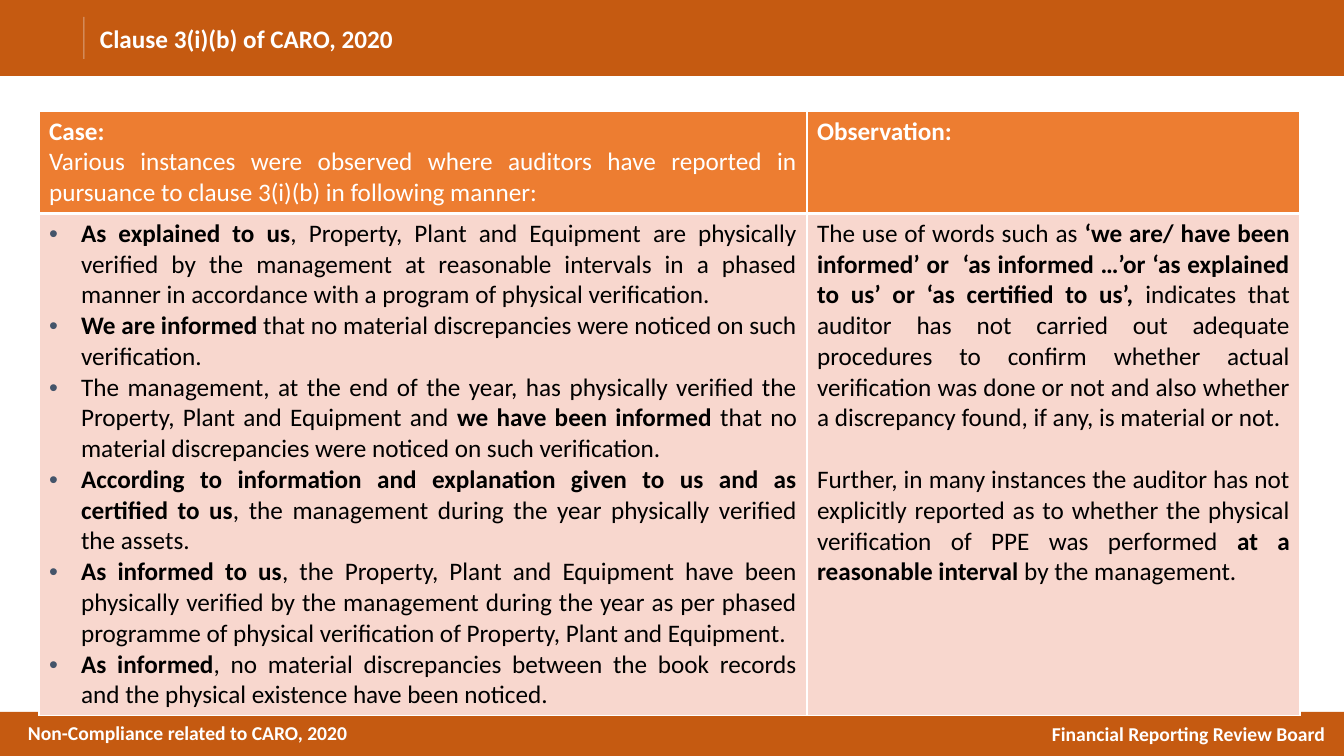
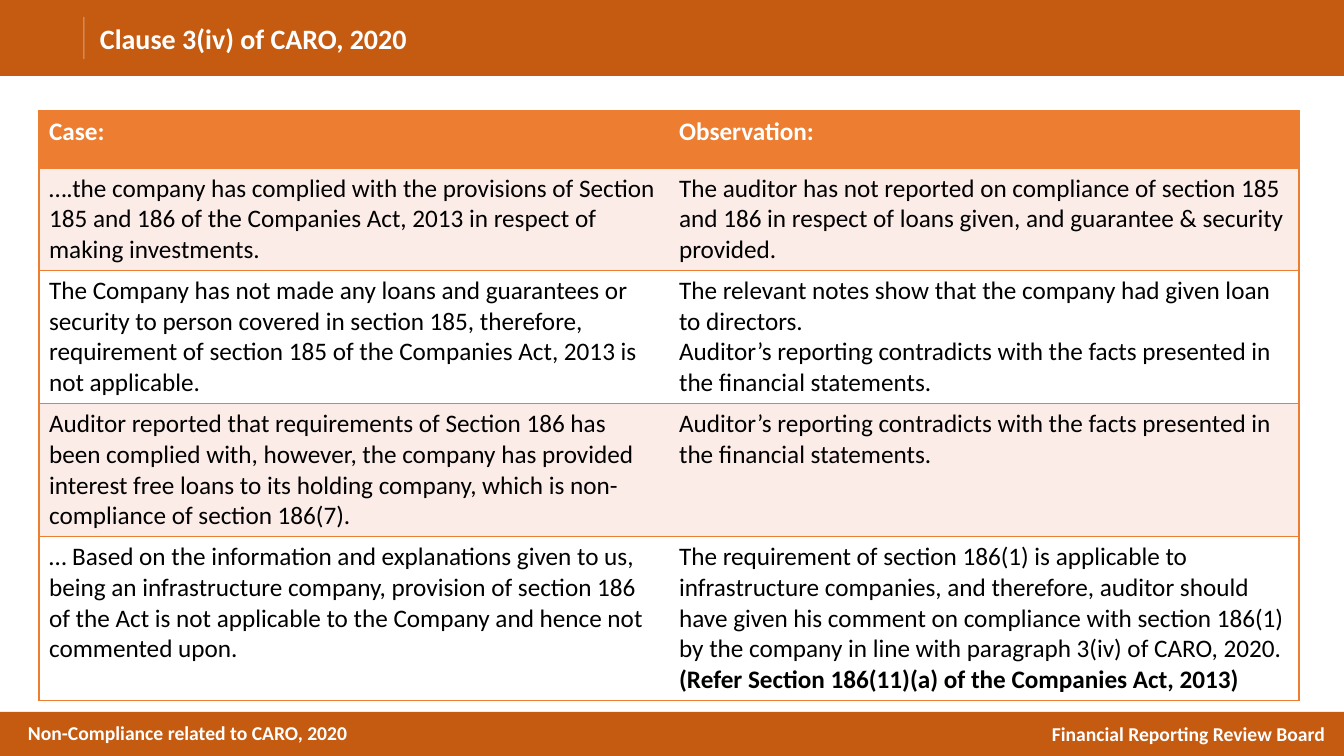
from lxml.etree import SubElement
from pptx import Presentation
from pptx.dml.color import RGBColor
from pptx.enum.shapes import MSO_CONNECTOR, MSO_SHAPE
from pptx.enum.text import MSO_ANCHOR, MSO_AUTO_SIZE, PP_ALIGN
from pptx.oxml.ns import qn
from pptx.util import Pt

PX = 12192000 / 1344
FONT = "Calibri"
COLORS = {
    "band": "C55A11", "rule": "F2F2F2", "white": "FFFFFF", "black": "000000",
    "header": "ED7D31", "rose": "F8D7CE", "blush": "FCECE8", "bullet": "44546A",
}


def write(para, text, size, color, align=PP_ALIGN.LEFT):
    """Fill a paragraph; text between ** marks is bold."""
    para.alignment = align
    for index, part in enumerate(text.split("**")):
        if part:
            span = para.add_run()
            span.text = part
            span.font.name = FONT
            span.font.size = Pt(size)
            span.font.bold = index % 2 == 1
            span.font.color.rgb = RGBColor.from_string(COLORS[color])


def set_border(cell, side, color, width):
    """Draw one side of a cell, or clear it when color is None."""
    line = SubElement(cell._tc.get_or_add_tcPr(), qn(f"a:ln{side}"), w=str(Pt(width)))
    if color:
        fill = SubElement(line, qn("a:solidFill"))
        SubElement(fill, qn("a:srgbClr"), val=COLORS[color])
    else:
        SubElement(line, qn("a:noFill"))


SLIDES = [
    {
        "title": "Clause 3(i)(b) of CARO, 2020", "title_size": 18, "title_width": 1224,
        "columns": [768, 493], "rows": [100, 495], "fills": ["header", "rose"],
        "grid": "white", "boxed": False, "align": PP_ALIGN.JUSTIFY, "bulleted": (1, 0),
        "cells": [
            [
                ["**Case:**",
                 "Various instances were observed where auditors have reported in pursuance "
                 "to clause 3(i)(b) in following manner:"],
                ["**Observation:**"],
            ],
            [
                ["**As explained to us**, Property, Plant and Equipment are physically verified "
                 "by the management at reasonable intervals in a phased manner in accordance "
                 "with a program of physical verification.",
                 "**We are informed **that no material discrepancies were noticed on such "
                 "verification.",
                 "The management, at the end of the year, has physically verified the Property, "
                 "Plant and Equipment and **we have been informed** that no material "
                 "discrepancies were noticed on such verification.",
                 "**According to information and explanation given to us and as certified to "
                 "us**, the management during the year physically verified the assets.",
                 "**As informed to us**, the Property, Plant and Equipment have been physically "
                 "verified by the management during the year as per phased programme of "
                 "physical verification of Property, Plant and Equipment.",
                 "**As informed**, no material discrepancies between the book records and the "
                 "physical existence have been noticed."],
                ["The use of words such as **‘we are/ have been informed’ or  ‘as informed …’or "
                 "‘as explained to us’ or ‘as certified to us’, **indicates that auditor has not "
                 "carried out adequate procedures to confirm whether actual verification was "
                 "done or not and also whether a discrepancy found, if any, is material or not.",
                 "Further, in many instances the auditor has not explicitly reported as to "
                 "whether the physical verification of PPE was performed **at a reasonable "
                 "interval **by the management."],
            ],
        ],
        "spaced": (1, 1),
    },
    {
        "title": "Clause 3(iv) of CARO, 2020", "title_size": 20, "title_width": 989,
        "columns": [630, 630], "rows": [57, 102, 133, 133, 164],
        "fills": ["header", "blush", "white", "blush", "white"],
        "grid": "header", "boxed": True, "align": PP_ALIGN.LEFT, "bulleted": None,
        "cells": [
            [["**Case:**"], ["**Observation:**"]],
            [
                ["….the company has complied with the provisions of Section 185 and 186 of the "
                 "Companies Act, 2013 in respect of making investments."],
                ["The auditor has not reported on compliance of section 185 and 186 in respect "
                 "of loans given, and guarantee & security provided."],
            ],
            [
                ["The Company has not made any loans and guarantees or security to person "
                 "covered in section 185, therefore, requirement of section 185 of the "
                 "Companies Act, 2013 is not applicable."],
                ["The relevant notes show that the company had given loan to directors.",
                 "Auditor’s reporting contradicts with the facts presented in the financial "
                 "statements."],
            ],
            [
                ["Auditor reported that requirements of Section 186 has been complied with, "
                 "however, the company has provided interest free loans to its holding company, "
                 "which is non-compliance of section 186(7)."],
                ["Auditor’s reporting contradicts with the facts presented in the financial "
                 "statements."],
            ],
            [
                ["… Based on the information and explanations given to us, being an "
                 "infrastructure company, provision of section 186 of the Act is not applicable "
                 "to the Company and hence not commented upon."],
                ["The requirement of section 186(1) is applicable to infrastructure companies, "
                 "and therefore, auditor should have given his comment on compliance with "
                 "section 186(1) by the company in line with paragraph 3(iv) of CARO, 2020. "
                 "**(Refer Section 186(11)(a) of the Companies Act, 2013)**"],
            ],
        ],
        "spaced": None,
    },
]

deck = Presentation()
deck.slide_width, deck.slide_height = round(1344 * PX), round(756 * PX)
layout = deck.slide_layouts[5]
for holder in list(layout.placeholders)[1:]:
    holder.element.getparent().remove(holder.element)
pages = [deck.slides.add_slide(layout) for content in SLIDES]

# Shared bands, rule and footers: drawn once, then moved to the layout
shapes = pages[0].shapes
shared = []
for top, height in [(0, 76), (712, 44)]:
    band = shapes.add_shape(MSO_SHAPE.RECTANGLE, 0, round(top * PX),
                            deck.slide_width, round(height * PX))
    band.shadow.inherit = False
    band.fill.solid()
    band.fill.fore_color.rgb = RGBColor.from_string(COLORS["band"])
    band.line.fill.background()
    shared.append(band)

rule = shapes.add_connector(MSO_CONNECTOR.STRAIGHT, round(84 * PX), round(17 * PX),
                            round(84 * PX), round(59 * PX))
rule.line.width = Pt(0.75)
rule.line.color.rgb = RGBColor.from_string(COLORS["rule"])
rule_color = rule.element.spPr.find(".//" + qn("a:srgbClr"))
SubElement(rule_color, qn("a:alpha"), val="49000")
SubElement(rule.element.spPr, qn("a:effectLst"))
shared.append(rule)

for text, left, top, width, align, wrap in [
    ("Non-Compliance related to CARO, 2020", 18, 716, 457, PP_ALIGN.LEFT, True),
    ("Financial Reporting Review Board", 1041, 717, 295, PP_ALIGN.CENTER, False),
]:
    box = shapes.add_textbox(round(left * PX), round(top * PX), round(width * PX), round(34 * PX))
    box.text_frame.word_wrap = wrap
    write(box.text_frame.paragraphs[0], f"**{text}**", 14, "white", align)
    shared.append(box)

for shape in shared:
    layout.shapes.element.append(shape.element)

for page, content in zip(pages, SLIDES):
    # Title
    title = page.shapes.title
    title.left, title.top = round(93 * PX), round(9 * PX)
    title.width, title.height = round(content["title_width"] * PX), round(58 * PX)
    frame = title.text_frame
    frame.auto_size = MSO_AUTO_SIZE.NONE
    frame.vertical_anchor = MSO_ANCHOR.MIDDLE
    frame.margin_left = frame.margin_right = round(7 * PX)
    frame.margin_top = frame.margin_bottom = round(4 * PX)
    write(frame.paragraphs[0], f"**{content['title']}**", content["title_size"], "white")

    # Table
    columns, rows = content["columns"], content["rows"]
    table = page.shapes.add_table(len(rows), len(columns), round(39 * PX), round(111 * PX),
                                  round(sum(columns) * PX), round(sum(rows) * PX)).table
    for column, width in zip(table.columns, columns):
        column.width = round(width * PX)
    for row, height in zip(table.rows, rows):
        row.height = round(height * PX)

    for row_index, row_cells in enumerate(content["cells"]):
        for column_index, texts in enumerate(row_cells):
            cell = table.cell(row_index, column_index)
            position = (row_index, column_index)

            # Borders and fill; a boxed table has no inner vertical lines
            for side in "LRTB":
                inner = (side, column_index) in [("R", 0), ("L", 1)]
                heavy = not content["boxed"] and (side, row_index) in [("B", 0), ("T", 1)]
                color = None if content["boxed"] and inner else content["grid"]
                set_border(cell, side, color, 3 if heavy else 1)
            cell.fill.solid()
            cell.fill.fore_color.rgb = RGBColor.from_string(COLORS[content["fills"][row_index]])

            # Text
            for index, text in enumerate(texts):
                frame = cell.text_frame
                para = frame.paragraphs[0] if index == 0 else frame.add_paragraph()
                if position == content["bulleted"]:
                    properties = para._p.get_or_add_pPr()
                    properties.set("marL", str(round(32 * PX)))
                    properties.set("indent", str(round(-32 * PX)))
                    bullet_color = SubElement(properties, qn("a:buClr"))
                    SubElement(bullet_color, qn("a:srgbClr"), val=COLORS["bullet"])
                    SubElement(properties, qn("a:buFont"), typeface="Arial")
                    SubElement(properties, qn("a:buChar"), char="•")
                elif position == content["spaced"] and index:
                    para.space_before = Pt(22)
                write(para, text, 18, "black" if row_index else "white", content["align"])

deck.save("out.pptx")
